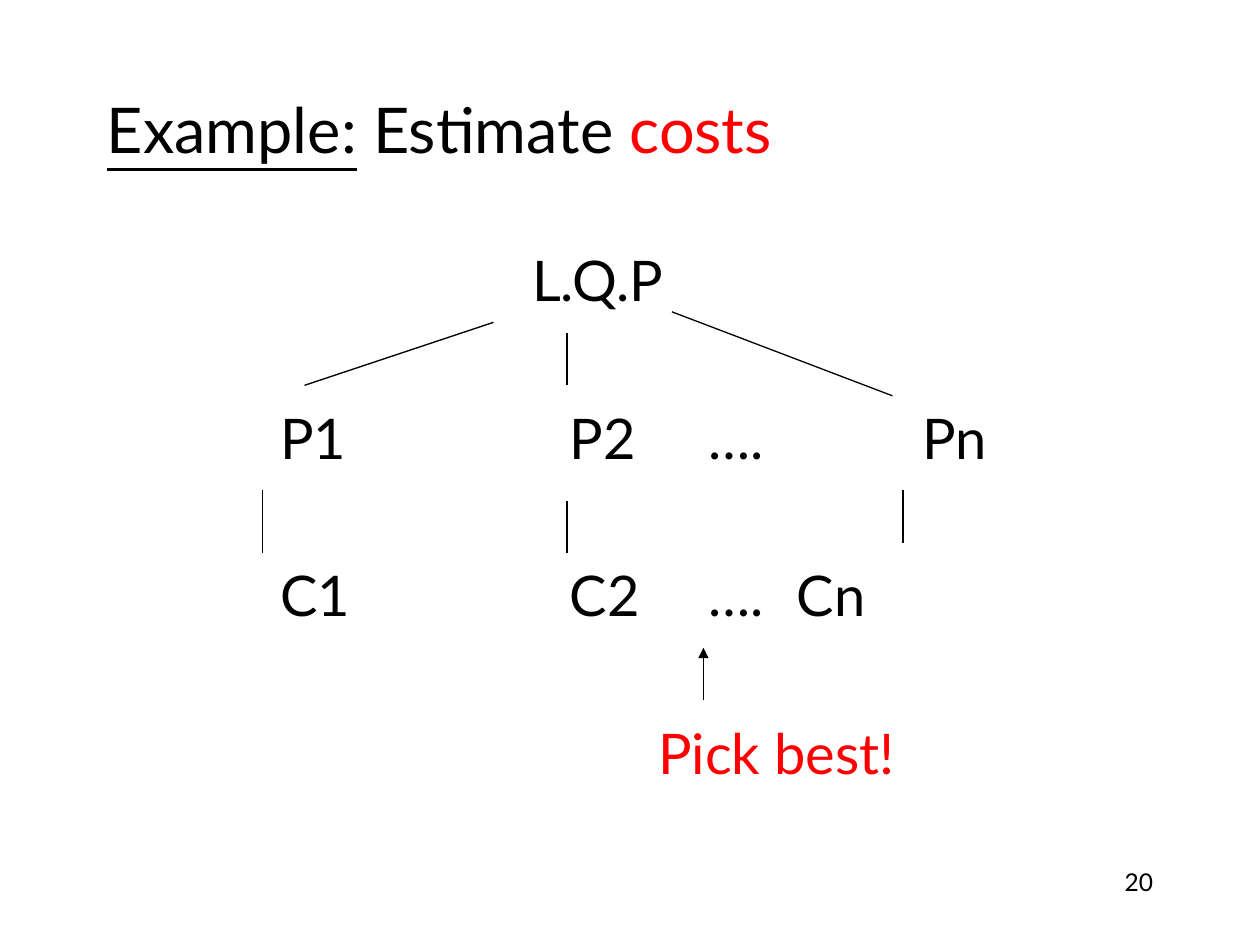
from lxml.etree import SubElement
from pptx import Presentation
from pptx.dml.color import RGBColor
from pptx.enum.shapes import MSO_CONNECTOR
from pptx.enum.text import MSO_ANCHOR, PP_ALIGN
from pptx.oxml.ns import qn
from pptx.util import Emu, Pt

EMU_PER_PX = 7620
BLACK = "000000"
RED = "FF0000"
TITLE_FORMAT = {"name": "Lato", "size": Pt(36)}
LABEL_FORMAT = {"name": "Lato", "size": Pt(32)}
NUMBER_FORMAT = {"name": "Lato", "size": Pt(14)}
TREE_TOP = 228
ROW_PITCH = 150
TREE_ROWS = [
    [("L.Q.P", 495, BLACK)],
    [("P1", 255, BLACK), ("P2", 531, BLACK), ("….", 663, BLACK), ("Pn", 867, BLACK)],
    [("C1", 255, BLACK), ("C2", 531, BLACK), ("….", 663, BLACK), ("Cn", 747, BLACK)],
    [("Pick best!", 615, RED)],
]
BRANCHES = [
    (470, 307, 290, 367),
    (540, 317, 540, 367),
    (640, 297, 850, 377),
    (250, 467, 250, 527),
    (540, 477, 540, 527),
    (860, 467, 860, 517),
]
PICK_ARROW = (670, 667, 670, 617)


def px(length):
    return Emu(length * EMU_PER_PX)


def color(hex_value):
    return RGBColor.from_string(hex_value)


def apply_format(target, values):
    for attribute, value in values.items():
        setattr(target, attribute, value)


def add_text(slide, bounds, pieces, text_format, anchor=MSO_ANCHOR.TOP, align=PP_ALIGN.LEFT):
    frame = slide.shapes.add_textbox(*map(px, bounds)).text_frame
    apply_format(frame, {"word_wrap": True, "vertical_anchor": anchor})
    paragraph = frame.paragraphs[0]
    paragraph.alignment = align
    for wording, hex_value, extra in pieces:
        run = paragraph.add_run()
        run.text = wording
        apply_format(run.font, {**text_format, **extra})
        run.font.color.rgb = color(hex_value)


def add_line(slide, ends, arrow=False):
    branch = slide.shapes.add_connector(MSO_CONNECTOR.STRAIGHT, *map(px, ends))
    branch.line.width = Pt(0.75)
    branch.line.color.rgb = color(BLACK)
    if arrow:
        SubElement(branch.line._get_or_add_ln(), qn("a:tailEnd"), type="triangle")
    SubElement(branch._element.spPr, qn("a:effectLst"))


def add_tree(slide):
    for level, labels in enumerate(TREE_ROWS):
        for wording, left, hex_value in labels:
            width = 280 if hex_value == RED else 160
            bounds = (left, TREE_TOP + level * ROW_PITCH, width, 77)
            add_text(slide, bounds, [(wording, hex_value, {})], LABEL_FORMAT)
    for ends in BRANCHES:
        add_line(slide, ends)
    add_line(slide, PICK_ARROW, arrow=True)


def main():
    deck = Presentation()
    apply_format(deck, {"slide_width": px(1200), "slide_height": px(900)})
    slide = deck.slides.add_slide(deck.slide_layouts[6])
    title = [("Example:", BLACK, {"underline": True}), (" Estimate ", BLACK, {}), ("costs", RED, {})]
    add_text(slide, (90, 47, 1020, 150), title, TITLE_FORMAT, anchor=MSO_ANCHOR.MIDDLE)
    add_tree(slide)
    add_text(slide, (860, 820, 250, 60), [("20", BLACK, {})], NUMBER_FORMAT, align=PP_ALIGN.RIGHT)
    deck.save("out.pptx")


if __name__ == "__main__":
    main()
